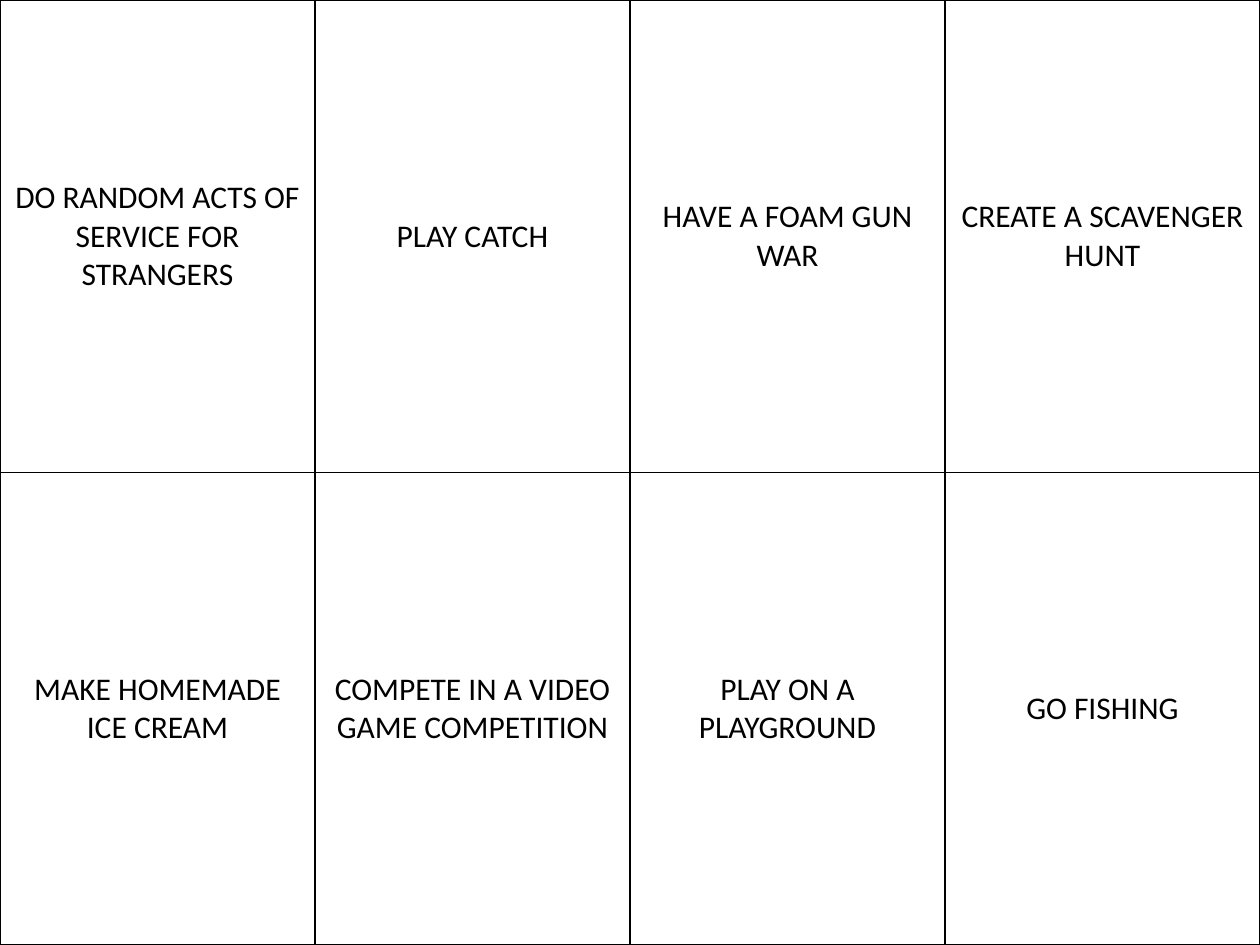
from lxml.etree import SubElement
from pptx import Presentation
from pptx.dml.color import RGBColor
from pptx.enum.text import MSO_ANCHOR as Anchor, PP_ALIGN as Align
from pptx.oxml.ns import qn
from pptx.util import Pt

COLORS = {"text": "000000", "border": "000000", "card": "FFFFFF"}
WIDTH, HEIGHT = 720, 540

ACTIVITIES = [
    ["DO RANDOM ACTS OF SERVICE FOR STRANGERS", "PLAY CATCH",
     "HAVE A FOAM GUN WAR", "CREATE A SCAVENGER HUNT"],
    ["MAKE HOMEMADE ICE CREAM", "COMPETE IN A VIDEO GAME COMPETITION",
     "PLAY ON A PLAYGROUND", "GO FISHING"],
]


class CardSheet:
    font, size, border = "Calibri", 18, 1

    def __init__(self, slide):
        self.slide = slide

    def table(self, x, y, w, h, rows):
        n_rows, n_cols = len(rows), len(rows[0])
        table = self.slide.shapes.add_table(
            n_rows, n_cols, Pt(x), Pt(y), Pt(w), Pt(h)).table
        table.first_row = table.horz_banding = False
        for col in table.columns:
            col.width = Pt(w / n_cols)
        for row, texts in zip(table.rows, rows):
            row.height = Pt(h / n_rows)
            for cell, text in zip(row.cells, texts):
                self.card(cell, text)

    def card(self, cell, text):
        cell.text = text
        cell.vertical_anchor = Anchor.MIDDLE
        p = cell.text_frame.paragraphs[0]
        p.alignment = Align.CENTER
        p.font.name, p.font.size = self.font, Pt(self.size)
        p.font.color.rgb = RGBColor.from_string(COLORS["text"])
        self.borders(cell)
        cell.fill.solid()
        cell.fill.fore_color.rgb = RGBColor.from_string(COLORS["card"])

    def borders(self, cell):
        # Borders must precede the fill in the cell properties
        props = cell._tc.get_or_add_tcPr()
        for side in ("lnL", "lnR", "lnT", "lnB"):
            line = SubElement(props, qn(f"a:{side}"), w=str(Pt(self.border)))
            fill = SubElement(line, qn("a:solidFill"))
            SubElement(fill, qn("a:srgbClr"), val=COLORS["border"])


def main():
    prs = Presentation()
    prs.slide_width, prs.slide_height = Pt(WIDTH), Pt(HEIGHT)
    sheet = CardSheet(prs.slides.add_slide(prs.slide_layouts[6]))

    # Activity cards fill the whole slide
    sheet.table(0, 0, WIDTH, HEIGHT, ACTIVITIES)

    prs.save("out.pptx")


if __name__ == "__main__":
    main()
